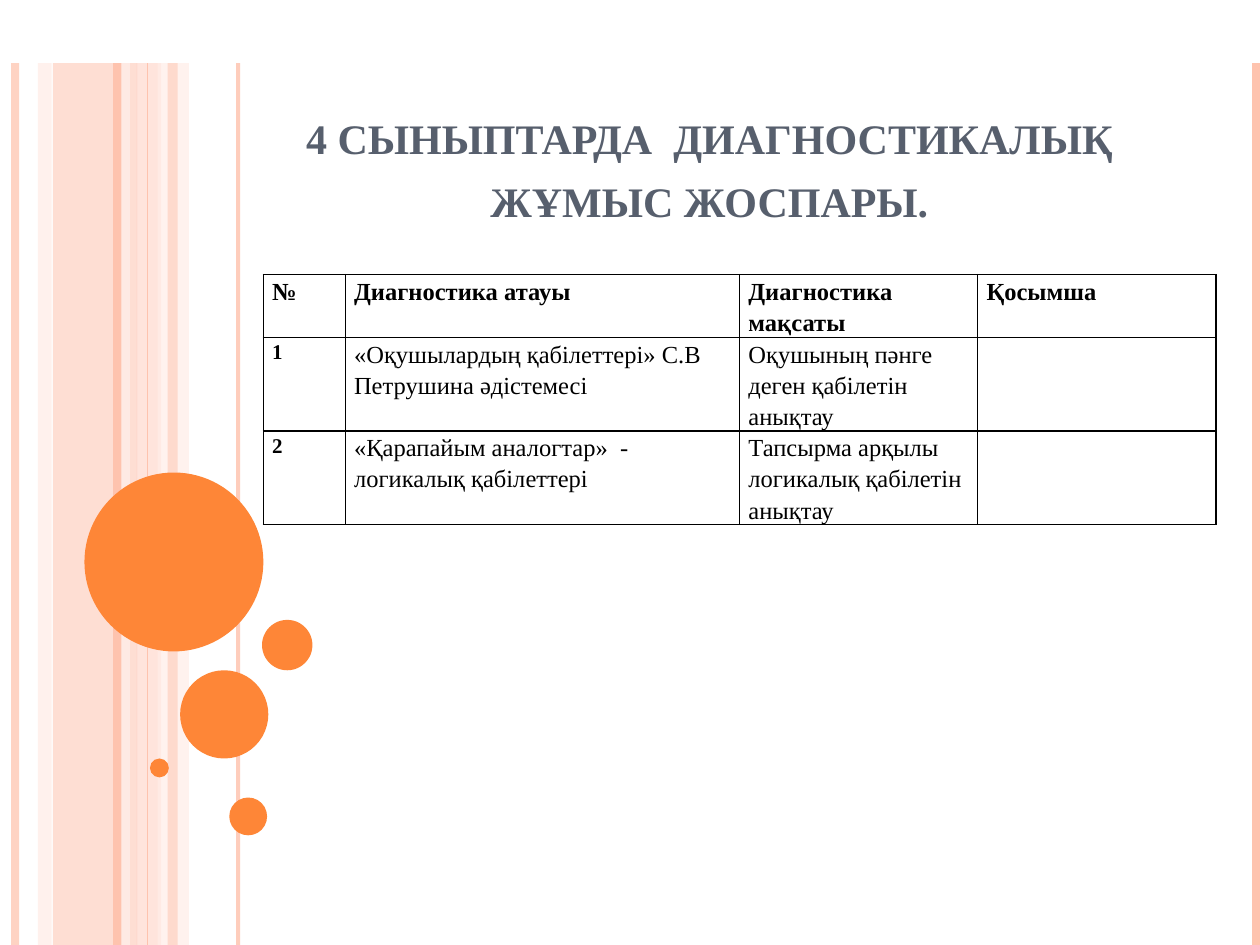
"""Build a slide with a diagnostic work plan table beside striped decor."""
from pptx import Presentation
from pptx.dml.color import RGBColor
from pptx.enum import shapes, text
from pptx.oxml import parse_xml
from pptx.oxml.ns import nsdecls, qn
from pptx.util import Inches, Pt

PEACH = RGBColor(0xFE, 0xC3, 0xAE)
PALE = RGBColor(0xFF, 0xD9, 0xCE)
MIST = RGBColor(0xFF, 0xED, 0xE8)
ORANGE = RGBColor(0xFE, 0x86, 0x37)
SLATE = RGBColor(0x57, 0x5F, 0x6D)
WHITE = RGBColor(0xFF, 0xFF, 0xFF)
BLACK = RGBColor(0x00, 0x00, 0x00)
FONT = "Times New Roman"


def fade(item, alpha):
    if alpha < 100:
        color = next(item._element.spPr.iter(qn("a:srgbClr")))
        color.append(parse_xml(f'<a:alpha {nsdecls("a")} val="{alpha * 1000}"/>'))


def draw(kind, left, top, width, height, color, alpha=100):
    item = slide.shapes.add_shape(
        kind, Inches(left), Inches(top), Inches(width), Inches(height))
    item.shadow.inherit = False
    item.fill.solid()
    item.fill.fore_color.rgb = color
    item.line.fill.background()
    fade(item, alpha)


deck = Presentation()
deck.slide_width, deck.slide_height = Inches(10), Inches(7.5)
slide = deck.slides.add_slide(deck.slide_layouts[5])
rect = shapes.MSO_SHAPE.RECTANGLE

bands = [(0.42, 0.67, PEACH, 54), (0.3, 0.11, PALE, 36),
         (1.08, 0.2, PALE, 70), (1.25, 0.25, MIST, 71)]
for left, width, color, alpha in bands:
    draw(rect, left, 0, width, 7.5, color, alpha)

stripes = [(0.12, PEACH, 4.5, 73), (1, MIST, 4.5, 83), (0.93, PEACH, 4.5, 100),
           (1.89, PEACH, 2.25, 82), (1.17, PEACH, 0.75, 100),
           (9.97, PEACH, 4.5, 100)]
for left, color, weight, alpha in stripes:
    stripe = slide.shapes.add_connector(
        shapes.MSO_CONNECTOR.STRAIGHT, Inches(left), 0, Inches(left), Inches(7.5))
    stripe.line.color.rgb = color
    stripe.line.width = Pt(weight)
    fade(stripe, alpha)
    stripe._element.spPr.append(parse_xml(f'<a:effectLst {nsdecls("a")}/>'))

draw(rect, 1.33, 0, 0.08, 7.5, PEACH, 51)

dots = [(0.67, 3.75, 1.42), (1.43, 5.32, 0.7), (1.19, 6.02, 0.15),
        (1.82, 6.33, 0.3), (2.08, 4.92, 0.4)]
for left, top, size in dots:
    draw(shapes.MSO_SHAPE.OVAL, left, top, size, size, ORANGE)

title = slide.shapes.title
title.left, title.top = Inches(2.01), Inches(0.52)
title.width, title.height = Inches(7.24), Inches(1.34)
frame = title.text_frame
frame.text = "4 сыныптарда  диагностикалық жұмыс жоспары."
frame.word_wrap = True
frame.auto_size = text.MSO_AUTO_SIZE.NONE
frame.vertical_anchor = text.MSO_ANCHOR.BOTTOM
para = frame.paragraphs[0]
para.alignment = text.PP_ALIGN.CENTER
para.line_spacing = Pt(36)
para.font.name = FONT
para.font.size = Pt(30)
para.font.bold = True
para.font.color.rgb = SLATE
para.runs[0]._r.get_or_add_rPr().set("cap", "small")

rows = [
    ["№", "Диагностика атауы", "Диагностика мақсаты", "Қосымша"],
    ["1", "«Оқушылардың қабілеттері» С.В Петрушина әдістемесі",
     "Оқушының пәнге деген қабілетін анықтау", ""],
    ["2", "«Қарапайым аналогтар»  - логикалық қабілеттері",
     "Тапсырма арқылы логикалық қабілетін анықтау", ""],
]
widths = [0.65, 3.13, 1.89, 1.89]
heights = [0.5, 0.74, 0.74]
grid = slide.shapes.add_table(
    len(rows), len(widths), Inches(2.09), Inches(2.18),
    Inches(sum(widths)), Inches(sum(heights))).table
for col, width in zip(grid.columns, widths):
    col.width = Inches(width)
for row, height in zip(grid.rows, heights):
    row.height = Inches(height)

for i, row in enumerate(rows):
    for j, words in enumerate(row):
        cell = grid.cell(i, j)
        cell.text = words
        cell.margin_left = cell.margin_right = Inches(0.07)
        cell.margin_top = cell.margin_bottom = 0
        para = cell.text_frame.paragraphs[0]
        para.line_spacing = 1.15
        para.font.name = FONT
        para.font.size = Pt(12 if i and j == 0 else 14)
        para.font.bold = i == 0 or j == 0
        para.font.color.rgb = BLACK
        props = cell._tc.get_or_add_tcPr()
        for side in ("lnL", "lnR", "lnT", "lnB"):
            props.append(parse_xml(
                f'<a:{side} {nsdecls("a")} w="12700"><a:solidFill>'
                f'<a:srgbClr val="{BLACK}"/></a:solidFill></a:{side}>'))
        cell.fill.background()

draw(rect, 0, 0, 10, 0.5, WHITE)
deck.save("out.pptx")
